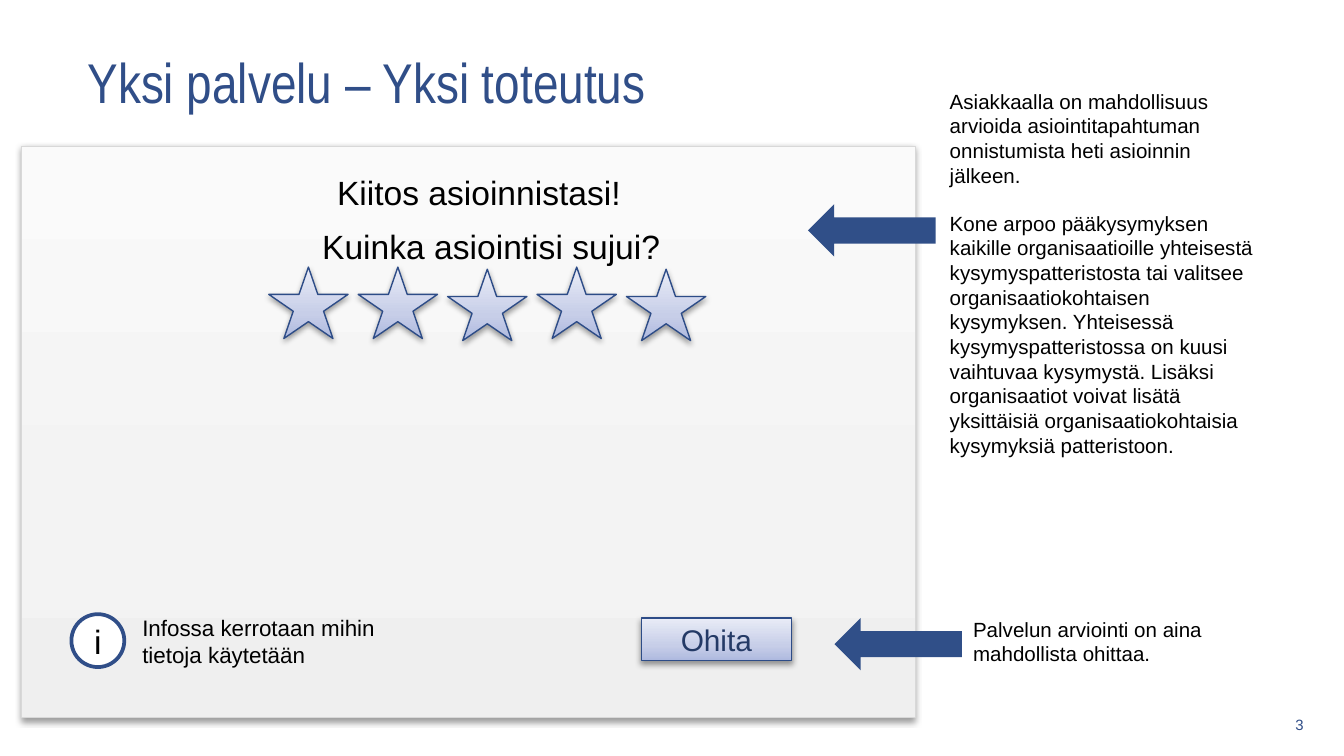
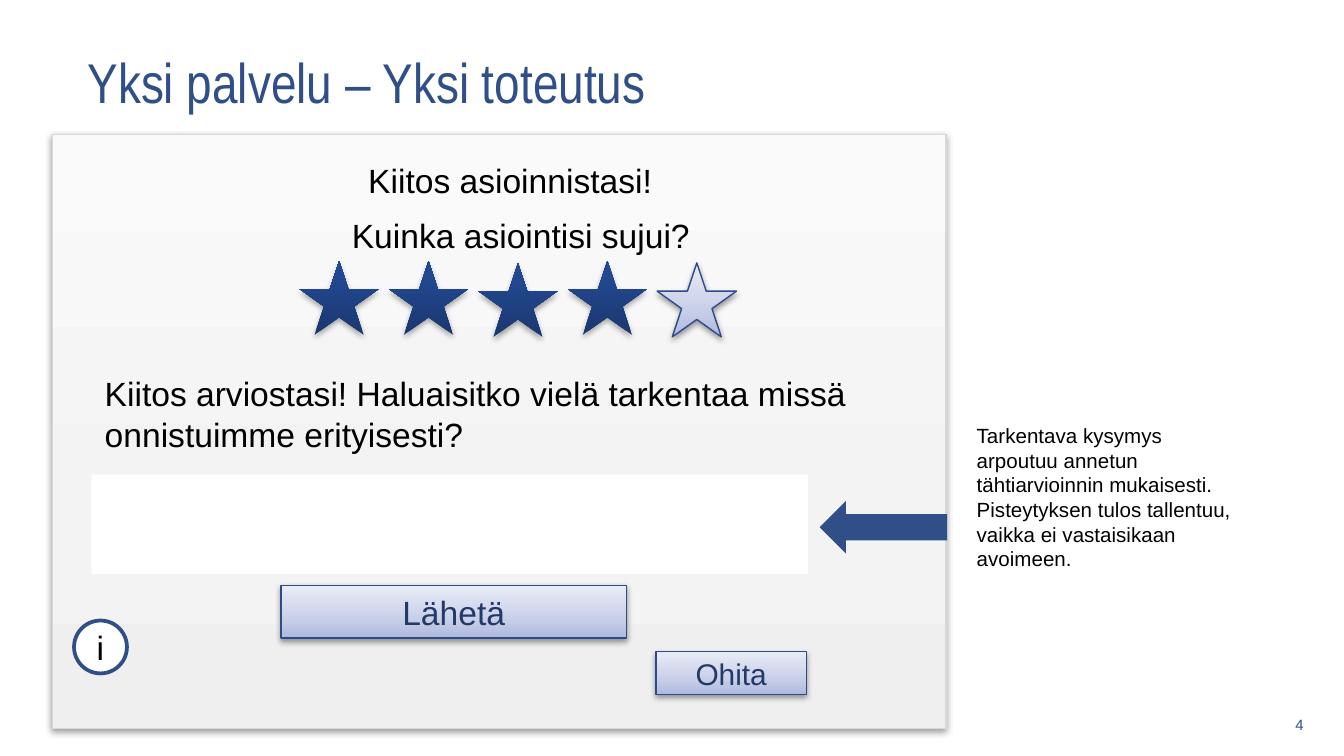
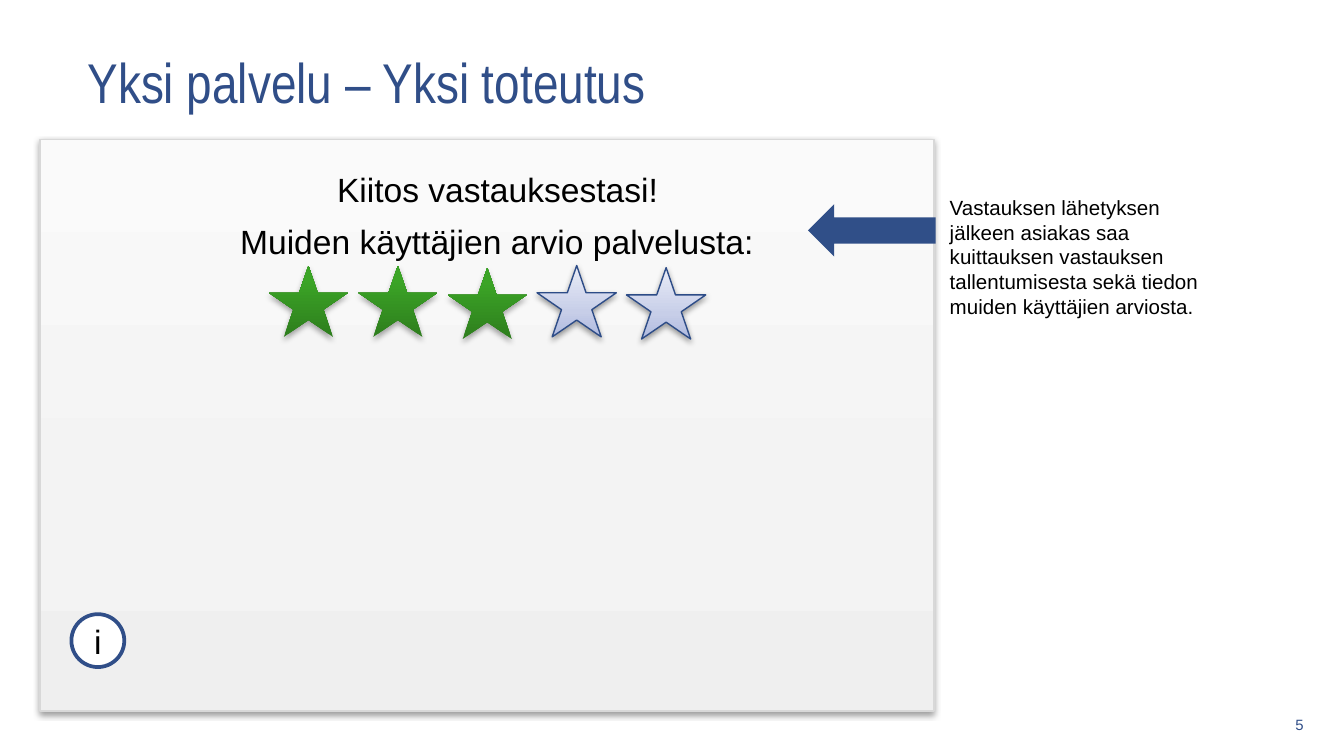
from lxml import etree
from pptx import Presentation
from pptx import util as u
from pptx.dml import color
from pptx.enum import shapes, text
from pptx.oxml import ns

rgb = color.RGBColor.from_string
ms = shapes.MSO_SHAPE
al = text.PP_ALIGN
mid = text.MSO_ANCHOR.MIDDLE

NAVY = "304E88"
ARROW = "304F88"
BLACK = "000000"
WHITE = "FFFFFF"
BUTTON_TEXT = "243A66"
SOFT = {"alpha": 38000, "dist": 20000}
STRONG = {"alpha": 35000, "dist": 23000}
PANEL = {"fill": [(0, "EFEFEF"), (35, "F3F3F3"), (100, "FAFAFA")],
         "line": "D8D8D8", "shadow": SOFT}
PALE = {"fill": [(0, "AEB9DF"), (35, "C7CEE8"), (100, "E9ECF7")],
        "line": "2D4C87", "shadow": SOFT}
BLUE = {"fill": [(0, "1A376F"), (80, "224891"), (100, "204793")], "shadow": STRONG}
GREEN = {"fill": [(0, "2E7E1D"), (80, "3BA426"), (100, "3AA724")], "shadow": STRONG}

TITLE = "Yksi palvelu – Yksi toteutus"
SLIDES = [
    {
        "number": "3",
        "panel": (0.41, 2.77, 16.89, 10.8),
        "headings": [
            ("Kuinka asiointisi sujui?", (5.84, 4.14, 7.01, 1.8)),
            ("Kiitos asioinnistasi!", (6.12, 3.12, 7.19, 1.02)),
        ],
        "stars": (5.08, 5.05, 1.35), "rating": 0, "rated": PALE,
        "arrows": [(15.27, 3.86), (15.77, 11.68)],
        "fields": [],
        "buttons": [("Ohita", 16, (12.12, 11.68, 2.84, 0.81))],
        "info": (1.35, 11.61),
        "notes": [
            (["Asiakkaalla on mahdollisuus arvioida asiointitapahtuman onnistumista heti asioinnin jälkeen.",
              "Kone arpoo pääkysymyksen kaikille organisaatioille yhteisestä kysymyspatteristosta tai valitsee "
              "organisaatiokohtaisen kysymyksen. Yhteisessä kysymyspatteristossa on kuusi vaihtuvaa kysymystä. "
              "Lisäksi organisaatiot voivat lisätä yksittäisiä organisaatiokohtaisia kysymyksiä patteristoon."],
             11, (17.7, 1.55, 6.38, 8.26)),
            (["Palvelun arviointi on aina mahdollista ohittaa."], 11, (18.14, 11.53, 5.59, 1.19)),
            (["Infossa kerrotaan mihin tietoja käytetään"], 12, (2.44, 11.48, 5.69, 1.27)),
        ],
    },
    {
        "number": "4",
        "panel": (0.99, 2.54, 16.89, 11.23),
        "headings": [
            ("Kuinka asiointisi sujui?", (6.4, 3.94, 10.01, 1.85)),
            ("Kiitos asioinnistasi!", (6.71, 2.9, 7.19, 1.07)),
        ],
        "stars": (5.66, 4.93, 1.4), "rating": 4, "rated": BLUE,
        "arrows": [(15.49, 9.47)],
        "fields": [(1.73, 8.97, 13.54, 1.88)],
        "buttons": [
            ("Ohita", 16, (12.4, 12.32, 2.84, 0.81)),
            ("Lähetä", 18, (5.31, 11.07, 6.53, 0.99)),
        ],
        "info": (1.4, 11.73),
        "notes": [
            (["Kiitos arviostasi! Haluaisitko vielä tarkentaa missä onnistuimme erityisesti?"],
             18, (1.73, 6.93, 14.6, 1.8)),
            (["Tarkentava kysymys arpoutuu annetun tähtiarvioinnin mukaisesti. Pisteytyksen tulos tallentuu, "
              "vaikka ei vastaisikaan avoimeen."], 11, (18.21, 7.87, 5.54, 3.56)),
        ],
    },
    {
        "number": "5",
        "panel": (0.76, 2.64, 16.89, 10.8),
        "headings": [
            ("Muiden käyttäjien arvio palvelusta:", (4.29, 4.06, 11.53, 1.02)),
            ("Kiitos vastauksestasi!", (6.12, 3.07, 7.19, 1.02)),
        ],
        "stars": (5.08, 5.02, 1.35), "rating": 3, "rated": GREEN,
        "arrows": [(15.27, 3.86)],
        "fields": [],
        "buttons": [],
        "info": (1.35, 11.61),
        "notes": [
            (["Vastauksen lähetyksen jälkeen asiakas saa kuittauksen vastauksen tallentumisesta sekä tiedon "
              "muiden käyttäjien arviosta."], 11, (17.7, 3.56, 5.31, 3.07)),
        ],
    },
]


def draw(tree, kind, at, fill, line=None, width=0.75, shadow=None):
    sp = tree.add_shape(kind, *map(u.Cm, at))
    if isinstance(fill, str):
        sp.fill.solid()
        sp.fill.fore_color.rgb = rgb(fill)
    else:
        sp.fill.gradient()
        sp.fill.gradient_angle = 90
        stops = sp.element.spPr.find(".//" + ns.qn("a:gsLst"))
        for old in list(stops):
            stops.remove(old)
        for pos, hexa in fill:
            gs = etree.SubElement(stops, ns.qn("a:gs"), pos=str(pos * 1000))
            etree.SubElement(gs, ns.qn("a:srgbClr"), val=hexa)
    if line:
        sp.line.color.rgb = rgb(line)
        sp.line.width = u.Pt(width)
    else:
        sp.line.fill.background()
    sp.shadow.inherit = False
    if shadow:
        effects = sp.element.spPr.find(ns.qn("a:effectLst"))
        outer = etree.SubElement(effects, ns.qn("a:outerShdw"), blurRad="40000",
                                 dist=str(shadow["dist"]), dir="5400000", rotWithShape="0")
        clr = etree.SubElement(outer, ns.qn("a:srgbClr"), val=BLACK)
        etree.SubElement(clr, ns.qn("a:alpha"), val=str(shadow["alpha"]))
    return sp


def write(sp, lines, size, ink=BLACK, align=al.LEFT, anchor=text.MSO_ANCHOR.TOP,
          fit=text.MSO_AUTO_SIZE.NONE, font="Arial"):
    tf = sp.text_frame
    for name, value in {"word_wrap": True, "auto_size": fit, "vertical_anchor": anchor}.items():
        setattr(tf, name, value)
    for i, line in enumerate(lines):
        p = tf.paragraphs[0] if i == 0 else tf.add_paragraph()
        p.alignment = align
        if i:
            p.space_before = u.Pt(size * 1.15)
        r = p.add_run()
        r.text = line
        for name, value in {"name": font, "size": u.Pt(size)}.items():
            setattr(r.font, name, value)
        r.font.color.rgb = rgb(ink)


prs = Presentation()
prs.slide_width, prs.slide_height = u.Cm(25.4), u.Cm(14.29)
grow = text.MSO_AUTO_SIZE.SHAPE_TO_FIT_TEXT

for d in SLIDES:
    s = prs.slides.add_slide(prs.slide_layouts[5])
    title = s.shapes.title
    for name, value in {"left": 1.4, "top": 0.3, "width": 20.5, "height": 2.46}.items():
        setattr(title, name, u.Cm(value))
    write(title, [TITLE], 30, NAVY, anchor=mid, font="Arial Narrow")

    card = s.shapes.add_group_shape().shapes
    draw(card, ms.RECTANGLE, d["panel"], **PANEL)
    for words, at in d["headings"]:
        write(card.add_textbox(*map(u.Cm, at)), [words], 18, fit=grow)
    left, top, height = d["stars"]
    for i in range(5):
        drop = 0.04 if i in (2, 4) else 0
        style = d["rated"] if i < d["rating"] else PALE
        draw(card, ms.STAR_5_POINT, (left + 1.69 * i, top + drop, 1.5, height), **style)

    for at in d["arrows"]:
        draw(s.shapes, ms.RIGHT_ARROW, (*at, 2.41, 0.99), ARROW).rotation = 180
    for at in d["fields"]:
        draw(s.shapes, ms.RECTANGLE, at, WHITE)
    for words, size, at in d["buttons"]:
        sp = draw(s.shapes, ms.RECTANGLE, at, **PALE)
        write(sp, [words], size, BUTTON_TEXT, al.CENTER, mid)
    sp = draw(s.shapes, ms.OVAL, (*d["info"], 1, 1), WHITE, NAVY, 2)
    write(sp, ["i"], 18, align=al.CENTER, anchor=mid)
    for lines, size, at in d["notes"]:
        write(s.shapes.add_textbox(*map(u.Cm, at)), lines, size, fit=grow)
    number = s.shapes.add_textbox(*map(u.Cm, (23.57, 13.39, 1.32, 0.61)))
    write(number, [d["number"]], 8, NAVY, al.RIGHT, mid)

prs.save("out.pptx")
